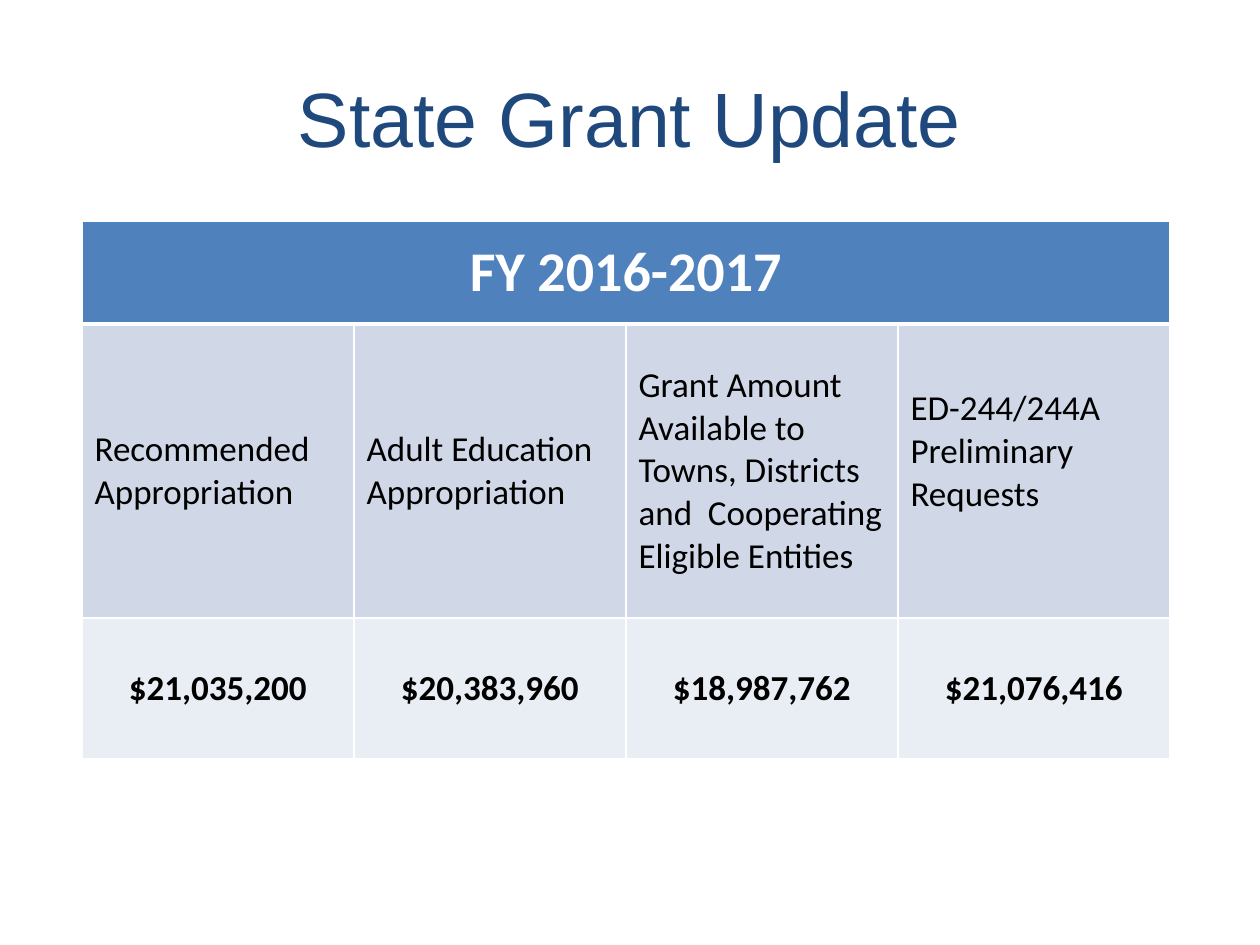
from pptx import Presentation
from pptx.dml.color import RGBColor
from pptx.enum.text import MSO_ANCHOR, PP_ALIGN
from pptx.oxml.ns import qn
from pptx.util import Emu, Pt
from lxml.etree import SubElement

EMU_PER_INCH = 914400
PX_PER_INCH = 126

WHITE = RGBColor(0xFF, 0xFF, 0xFF)
BLACK = RGBColor(0x00, 0x00, 0x00)
NAVY = RGBColor(0x1F, 0x49, 0x7D)
HEADER_BLUE = RGBColor(0x4F, 0x81, 0xBD)
LABEL_BLUE = RGBColor(0xD0, 0xD8, 0xE8)
AMOUNT_BLUE = RGBColor(0xE9, 0xED, 0xF4)

GRANTS = [
    ("Recommended Appropriation", "$21,035,200"),
    ("Adult Education Appropriation", "$20,383,960"),
    ("Grant Amount Available to Towns, Districts and  Cooperating Eligible Entities",
     "$18,987,762"),
    ("ED-244/244A Preliminary Requests", "$21,076,416"),
]
COLUMN_WIDTH = 272
ROW_HEIGHTS = [103, 294, 141]


def px(n):
    return Emu(round(n * EMU_PER_INCH / PX_PER_INCH))


def set_text(tf, text, font, size, color, bold=False, align=PP_ALIGN.CENTER):
    tf.word_wrap = True
    p = tf.paragraphs[0]
    p.text = text
    p.alignment = align
    r = p.runs[0]
    r.font.name = font
    r.font.size = Pt(size)
    r.font.bold = bold
    r.font.color.rgb = color


def add_title(s, text):
    sp = s.shapes.add_textbox(px(63), px(38), px(1134), px(157))
    tf = sp.text_frame
    tf.vertical_anchor = MSO_ANCHOR.MIDDLE
    set_text(tf, text, "Arial", 44, NAVY)


def set_borders(cell, top, bottom):
    tc_pr = cell._tc.get_or_add_tcPr()
    for side, width in (("L", 1), ("R", 1), ("T", top), ("B", bottom)):
        ln = SubElement(tc_pr, qn(f"a:ln{side}"), w=str(Pt(width)))
        fill = SubElement(ln, qn("a:solidFill"))
        SubElement(fill, qn("a:srgbClr"), val=str(WHITE))


def style_cell(cell, fill, top=1, bottom=1):
    set_borders(cell, top, bottom)
    cell.fill.solid()
    cell.fill.fore_color.rgb = fill
    cell.vertical_anchor = MSO_ANCHOR.MIDDLE


def add_grant_table(s, heading):
    n = len(GRANTS)
    frame = s.shapes.add_table(len(ROW_HEIGHTS), n, px(82), px(221),
                               px(COLUMN_WIDTH * n), px(sum(ROW_HEIGHTS)))
    table = frame.table
    for row, height in zip(table.rows, ROW_HEIGHTS):
        row.height = px(height)
    for col, (label, amount) in enumerate(GRANTS):
        table.columns[col].width = px(COLUMN_WIDTH)
        header_cell, label_cell, amount_cell = (
            table.cell(row, col) for row in range(len(ROW_HEIGHTS)))
        style_cell(header_cell, HEADER_BLUE, bottom=3)
        style_cell(label_cell, LABEL_BLUE, top=3)
        style_cell(amount_cell, AMOUNT_BLUE)
        set_text(label_cell.text_frame, label, "Calibri", 20, BLACK,
                 align=PP_ALIGN.LEFT)
        set_text(amount_cell.text_frame, amount, "Calibri", 20, BLACK, bold=True)
    table.cell(1, n - 1).margin_bottom = px(45)
    header = table.cell(0, 0)
    header.merge(table.cell(0, n - 1))
    set_text(header.text_frame, heading, "Calibri", 32, WHITE, bold=True)


def main():
    prs = Presentation()
    prs.slide_width = px(1260)
    prs.slide_height = px(945)
    s = prs.slides.add_slide(prs.slide_layouts[6])
    add_title(s, "State Grant Update")
    add_grant_table(s, "FY 2016-2017")
    prs.save("out.pptx")


if __name__ == "__main__":
    main()
